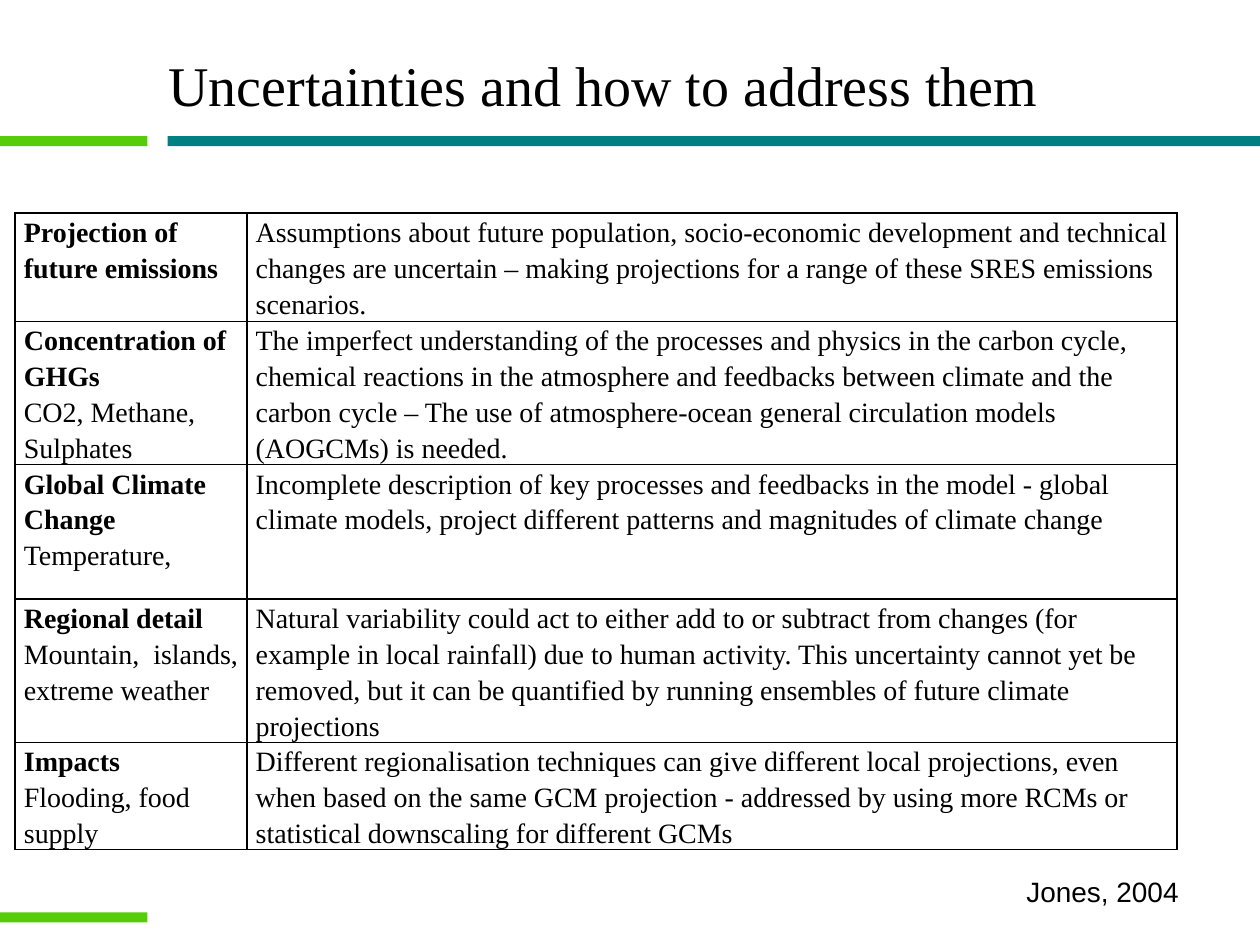
from lxml import etree
from pptx import Presentation
from pptx.dml.color import RGBColor
from pptx.enum.shapes import MSO_SHAPE
from pptx.enum.text import MSO_ANCHOR, PP_ALIGN
from pptx.oxml.ns import qn
from pptx.util import Inches, Pt

RECT = MSO_SHAPE.RECTANGLE
TOP, MIDDLE = MSO_ANCHOR.TOP, MSO_ANCHOR.MIDDLE
LEFT, CENTER = PP_ALIGN.LEFT, PP_ALIGN.CENTER

COLORS = {"ink": "000000", "teal": "008080", "green": "56CC0B"}
SERIF, SANS = "Times New Roman", "Arial"


def write(para, text, name, size, bold=False, align=LEFT):
    para.alignment = align
    run = para.add_run()
    run.text = text
    style = {"name": name, "size": Pt(size), "bold": bold}
    for key, value in style.items():
        setattr(run.font, key, value)
    run.font.color.rgb = RGBColor.from_string(COLORS["ink"])


def frame(cell):
    props = cell._tc.get_or_add_tcPr()
    for side in ("lnL", "lnR", "lnT", "lnB"):
        line = etree.SubElement(props, qn(f"a:{side}"), w=str(Pt(1)))
        fill = etree.SubElement(line, qn("a:solidFill"))
        etree.SubElement(fill, qn("a:srgbClr"), val=COLORS["ink"])


deck = Presentation()
deck.slide_width, deck.slide_height = Inches(10), Inches(7.5)
slide = deck.slides.add_slide(deck.slide_layouts[5])
shapes = slide.shapes

# Accent bars
for left, top, width, color in (
    (1.33, 1.08, 8.67, "teal"),
    (0, 1.08, 1.17, "green"),
    (0, 7.24, 1.17, "green"),
):
    bar = shapes.add_shape(RECT, Inches(left), Inches(top), Inches(width), Inches(0.08))
    bar.shadow.inherit = False
    bar.fill.solid()
    bar.fill.fore_color.rgb = RGBColor.from_string(COLORS[color])
    bar.line.fill.background()

# Title
title = shapes.title
title.left, title.top = Inches(0.04), Inches(0.29)
title.width, title.height = Inches(9.5), Inches(1.25)
title.text_frame.vertical_anchor = TOP
title.text_frame.margin_top = Inches(0.11)
write(title.text_frame.paragraphs[0], "Uncertainties and how to address them",
      SERIF, 32, align=CENTER)

# Table: heading, examples, explanation
rows = [
    ("Projection of future emissions", "",
     "Assumptions about future population, socio-economic development and technical "
     "changes are uncertain – making projections for a range of these SRES emissions "
     "scenarios."),
    ("Concentration of GHGs", "CO2, Methane, Sulphates",
     "The imperfect understanding of the processes and physics in the carbon cycle, "
     "chemical reactions in the atmosphere and feedbacks between climate and the carbon "
     "cycle – The use of atmosphere-ocean general circulation models (AOGCMs) is needed."),
    ("Global Climate Change", "Temperature,",
     "Incomplete description of key processes and feedbacks in the model - global climate "
     "models, project different patterns and magnitudes of climate change"),
    ("Regional detail", "Mountain,  islands, extreme weather",
     "Natural variability could act to either add to or subtract from changes (for example "
     "in local rainfall) due to human activity. This uncertainty cannot yet be removed, but "
     "it can be quantified by running ensembles of future climate projections"),
    ("Impacts", "Flooding, food supply",
     "Different regionalisation techniques can give different local projections, even when "
     "based on the same GCM projection - addressed by using more RCMs or statistical "
     "downscaling for different GCMs"),
]
widths = (1.84, 7.38)
heights = (0.86, 1.07, 1.07, 1.07, 0.84)
table = shapes.add_table(len(rows), len(widths), Inches(0.12), Inches(1.69),
                         Inches(sum(widths)), Inches(sum(heights))).table
table.first_row = table.horz_banding = False
for col, width in zip(table.columns, widths):
    col.width = Inches(width)
for row, height in zip(table.rows, heights):
    row.height = Inches(height)

pads = {"margin_left": 0.07, "margin_right": 0.07, "margin_top": 0, "margin_bottom": 0}
for row, (head, detail, note) in zip(table.rows, rows):
    for cell, parts in zip(row.cells, ([(head, True), (detail, False)], [(note, False)])):
        for key, value in pads.items():
            setattr(cell, key, Inches(value))
        frame(cell)
        cell.fill.background()
        body = cell.text_frame
        for index, (text, bold) in enumerate(part for part in parts if part[0]):
            para = body.add_paragraph() if index else body.paragraphs[0]
            para.line_spacing = 1.15
            write(para, text, SERIF, 16, bold)

# Source credit
credit = shapes.add_textbox(Inches(7.89), Inches(6.88), Inches(1.72), Inches(0.39)).text_frame
credit.word_wrap = True
credit.vertical_anchor = MIDDLE
write(credit.paragraphs[0], "Jones, 2004", SANS, 16, align=CENTER)

deck.save("out.pptx")
